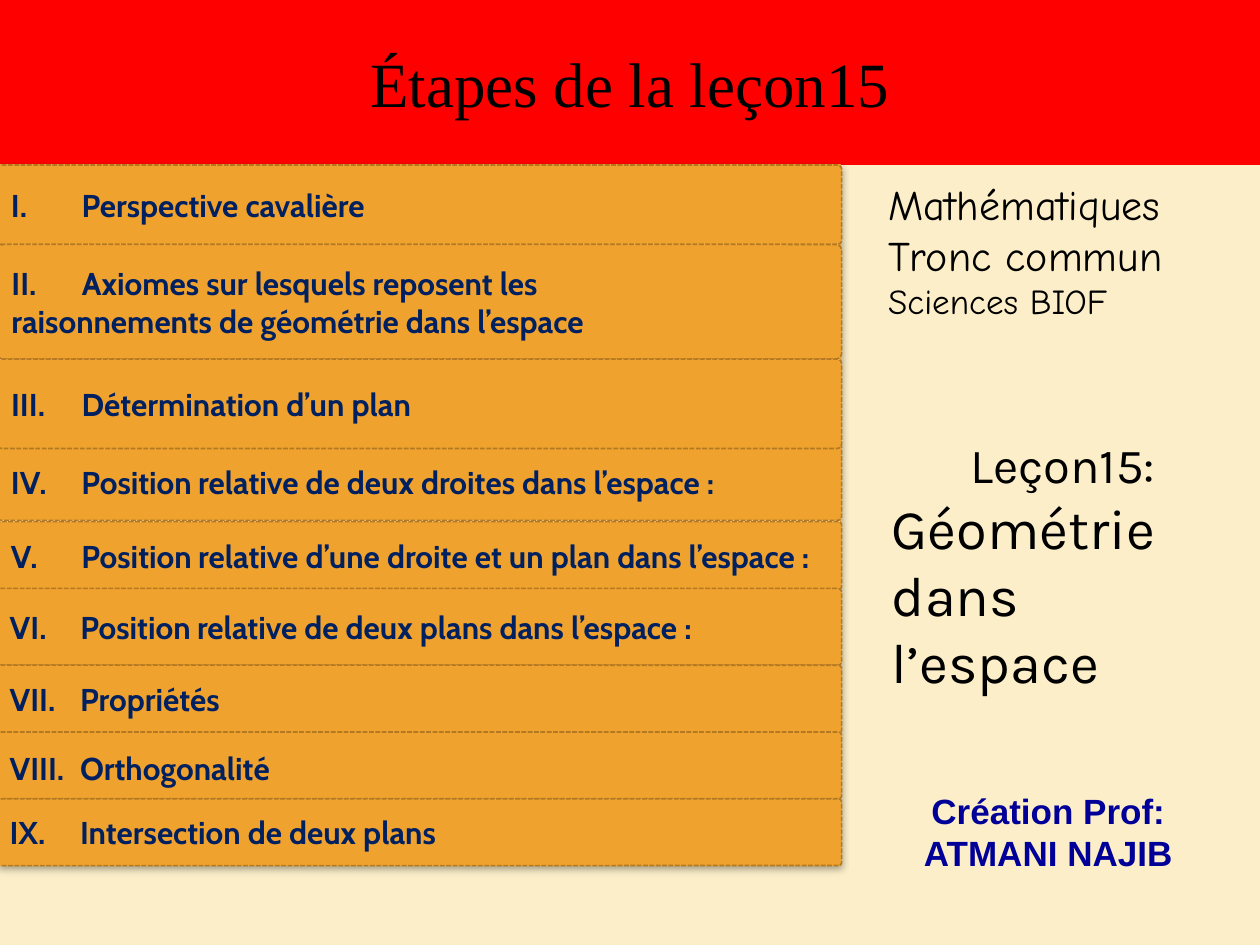
from lxml import etree
from pptx import Presentation
from pptx import util as u
from pptx.dml.color import RGBColor
from pptx.enum import dml, shapes, text
from pptx.oxml import ns

RED = RGBColor(0xFF, 0x00, 0x00)
BLACK = RGBColor(0x00, 0x00, 0x00)
CREAM = RGBColor(0xFB, 0xEE, 0xC9)
PEACH = RGBColor(0xF8, 0xDC, 0xC6)
AMBER = RGBColor(0xF0, 0xA2, 0x2E)
BROWN = RGBColor(0xB2, 0x78, 0x22)
NAVY = RGBColor(0x00, 0x20, 0x60)
BLUE = RGBColor(0x00, 0x00, 0x99)


def step(words):
    return [[("Position", 18), (" ", 16), (words, 18)]]


def plain(*lines):
    return [[(line, 18)] for line in lines]


ROWS = [
    (1, -0.02, 1.31, 0.63, plain("Perspective cavalière")),
    (2, -0.02, 1.94, 0.91, plain("Axiomes sur lesquels reposent les",
                                 "raisonnements de géométrie dans l’espace")),
    (4, -0.02, 3.52, 0.61, step("relative de deux droites dans l’espace :")),
    (3, -0.02, 2.85, 0.71, plain("Détermination d’un plan")),
    (5, -0.02, 4.14, 0.54, step("relative d’une droite et un plan dans l’espace :")),
    (6, -0.03, 4.67, 0.61, step("relative de deux plans dans l’espace :")),
    (7, -0.03, 5.28, 0.54, plain("Propriétés")),
    (8, -0.03, 5.81, 0.53, plain("Orthogonalité")),
    (9, -0.03, 6.34, 0.53, plain("Intersection de deux plans")),
]
EDGE = 6.68


def box(at):
    return [u.Inches(n) for n in at]


def node(parent, tag, **attrs):
    return etree.SubElement(parent, ns.qn(tag), attrs)


def shade(parent, blur, dist, angle, alpha):
    fx = node(parent, "a:effectLst")
    drop = node(fx, "a:outerShdw", blurRad=str(u.Pt(blur)), dist=str(u.Pt(dist)),
                dir=str(angle * 60000), algn="tl", rotWithShape="0")
    tint = node(drop, "a:srgbClr", val="000000")
    node(tint, "a:alpha", val=str(alpha * 1000))
    return fx


def write(para, runs, face, tone, bold=False):
    for words, size in runs:
        run = para.add_run()
        run.text = words
        font = run.font
        font.size = u.Pt(size)
        font.bold = bold
        font.color.rgb = tone
        font.name = face


def fill(frame, paras, face, tone, bold=False):
    frame.word_wrap = True
    for i, runs in enumerate(paras):
        para = frame.paragraphs[0] if i == 0 else frame.add_paragraph()
        write(para, runs, face, tone, bold)
    return frame.paragraphs


def shape(slide, kind, at, paint, edge, width):
    item = slide.shapes.add_shape(kind, *box(at))
    item.shadow.inherit = False
    item.fill.solid()
    item.fill.fore_color.rgb = paint
    item.line.color.rgb = edge
    item.line.width = u.Pt(width)
    return item


def panel(slide):
    item = shape(slide, shapes.MSO_SHAPE.RECTANGLE, (-0.01, 1.31, 6.68, 5.56),
                 PEACH, AMBER, 0.75)
    props = item.element.spPr
    props.remove(props.find(ns.qn("a:effectLst")))
    shade(props, 4, 2, 90, 35)


def row(slide, rank, left, top, high, paras):
    item = shape(slide, shapes.MSO_SHAPE.ROUNDED_RECTANGLE,
                 (left, top, EDGE - left, high), AMBER, BROWN, 0.9)
    item.adjustments[0] = 0.05
    item.line.dash_style = dml.MSO_LINE.SQUARE_DOT
    frame = item.text_frame
    frame.vertical_anchor = text.MSO_ANCHOR.MIDDLE
    lines = fill(frame, paras, "Cabin", NAVY, True)
    for para in lines:
        para.alignment = text.PP_ALIGN.LEFT
    props = lines[0]._p.get_or_add_pPr()
    props.set("marL", str(u.Inches(0.56)))
    props.set("indent", str(u.Inches(-0.56)))
    node(props, "a:buFont", typeface="+mj-lt")
    node(props, "a:buAutoNum", type="romanUcPeriod", startAt=str(rank))
    if rank == 8:
        lines[0].line_spacing = 1.15


def note(slide, at, paras, face, tone, bold=False):
    item = slide.shapes.add_textbox(*box(at))
    return fill(item.text_frame, paras, face, tone, bold)


def head(slide, words):
    item = slide.shapes.title
    item.left, item.top, item.width, item.height = box((0, 0, 10, 1.31))
    item.fill.solid()
    item.fill.fore_color.rgb = RED
    frame = item.text_frame
    frame.vertical_anchor = text.MSO_ANCHOR.MIDDLE
    lines = fill(frame, [[(words, 36)]], "Times New Roman", BLACK)
    lines[0].alignment = text.PP_ALIGN.CENTER


def topic(slide):
    lines = note(slide, (6.98, 3.4, 2.91, 1.65),
                 [[("Leçon15:", 28)], [("Géométrie dans l’espace", 32)]],
                 "Karla", BLACK)
    lines[0].alignment = text.PP_ALIGN.CENTER
    for para in lines:
        for run in para.runs:
            props = run._r.get_or_add_rPr()
            props.insert(1, shade(props, 3, 3, 45, 80))


def main():
    deck = Presentation()
    deck.slide_width, deck.slide_height = box((10, 7.5))
    slide = deck.slides.add_slide(deck.slide_layouts[5])
    back = slide.background.fill
    back.solid()
    back.fore_color.rgb = CREAM

    head(slide, "Étapes de la leçon15")
    panel(slide)
    for item in ROWS:
        row(slide, *item)
    topic(slide)
    note(slide, (6.95, 1.37, 2.74, 1.25),
         [[("Mathématiques Tronc commun ", 24), ("Sciences BIOF", 20)]],
         "Comic Neue", BLACK)
    sign = note(slide, (6.84, 6.22, 2.96, 0.77),
                [[("Création Prof: ATMANI NAJIB", 20)]], "Arial", BLUE, True)
    sign[0].alignment = text.PP_ALIGN.CENTER
    deck.save("out.pptx")


if __name__ == "__main__":
    main()
